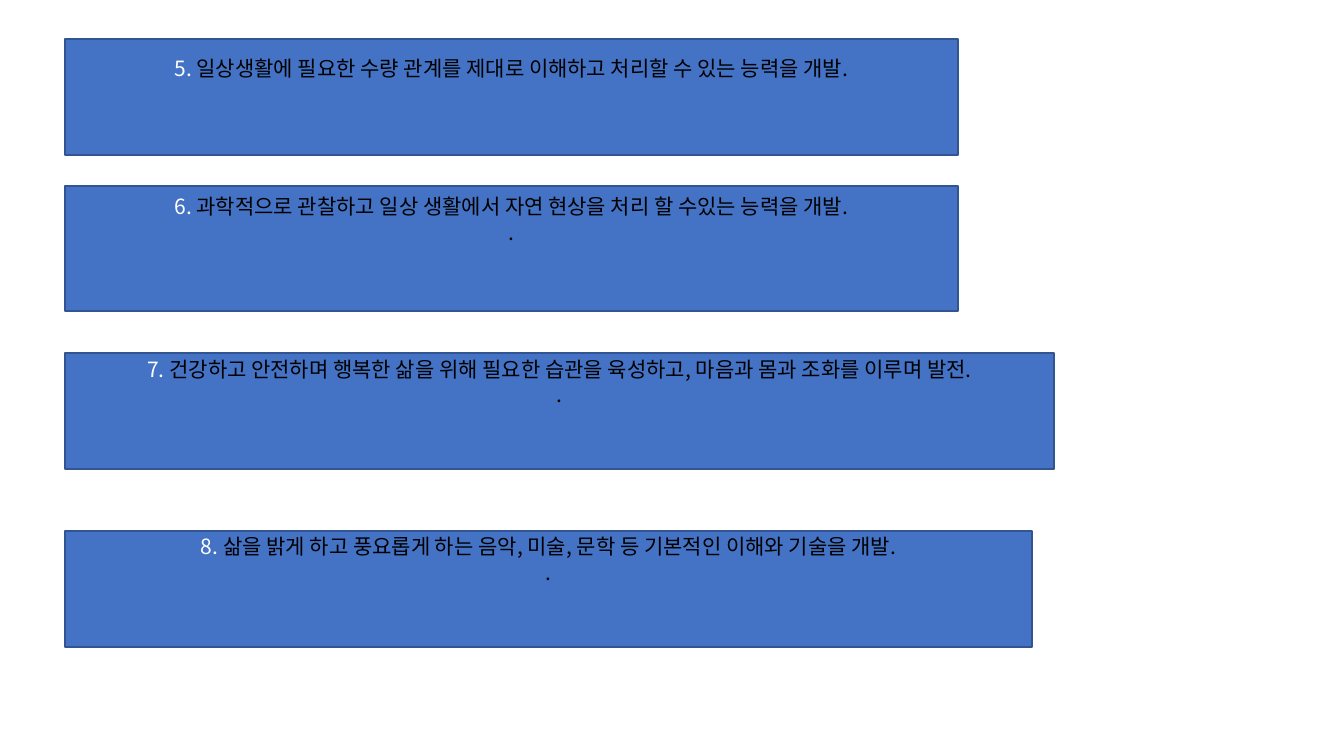
from lxml import etree
from pptx import Presentation
from pptx.dml.color import RGBColor
from pptx.enum.shapes import MSO_SHAPE
from pptx.enum.text import MSO_ANCHOR, PP_ALIGN
from pptx.oxml.ns import qn
from pptx.util import Emu, Pt

RECT = MSO_SHAPE.RECTANGLE
TOP = MSO_ANCHOR.TOP
CENTER = PP_ALIGN.CENTER
FONT = "Noto Sans CJK KR"
BLUE, EDGE, WHITE, BLACK = "4472C4", "325491", "FFFFFF", "000000"
LEFT = 65


def px(n):
    return Emu(round(n * 914400 / 100.8))


def add_run(para, text, color):
    run = para.add_run()
    run.text = text
    run.font.size = Pt(15)
    run.font.name = FONT
    run.font.color.rgb = RGBColor.from_string(color)
    east = etree.SubElement(run.font._element, qn("a:ea"))
    east.set("typeface", FONT)


# top, width, height, top inset, number, goal, second line
goals = [
    (39, 893, 116, 17, "5.",
     " 일상생활에 필요한 수량 관계를 제대로 이해하고 처리할 수 있는 능력을 개발.", ""),
    (186, 893, 125, 8, "6.",
     " 과학적으로 관찰하고 일상 생활에서 자연 현상을 처리 할 수있는 능력을 개발.", "."),
    (353, 989, 116, 3, "7.",
     " 건강하고 안전하며 행복한 삶을 위해 필요한 습관을 육성하고, 마음과 몸과 조화를 이루며 발전.", "."),
    (531, 967, 116, 3, "8.",
     " 삶을 밝게 하고 풍요롭게 하는 음악, 미술, 문학 등 기본적인 이해와 기술을 개발.", "."),
]

prs = Presentation()
prs.slide_width, prs.slide_height = px(1344), px(756)
slide = prs.slides.add_slide(prs.slide_layouts[6])

for top, width, height, inset, number, goal, extra in goals:
    box = slide.shapes.add_shape(RECT, px(LEFT), px(top), px(width), px(height))
    box.shadow.inherit = False
    box.fill.solid()
    box.fill.fore_color.rgb = RGBColor.from_string(BLUE)
    box.line.color.rgb = RGBColor.from_string(EDGE)
    box.line.width = Pt(1)
    frame = box.text_frame
    frame.word_wrap = True
    frame.vertical_anchor = TOP
    frame.margin_top = px(inset)
    para = frame.paragraphs[0]
    para.alignment = CENTER
    add_run(para, number, WHITE)
    add_run(para, goal, BLACK)
    if extra:
        para = frame.add_paragraph()
        para.alignment = CENTER
        add_run(para, extra, BLACK)

prs.save("out.pptx")
